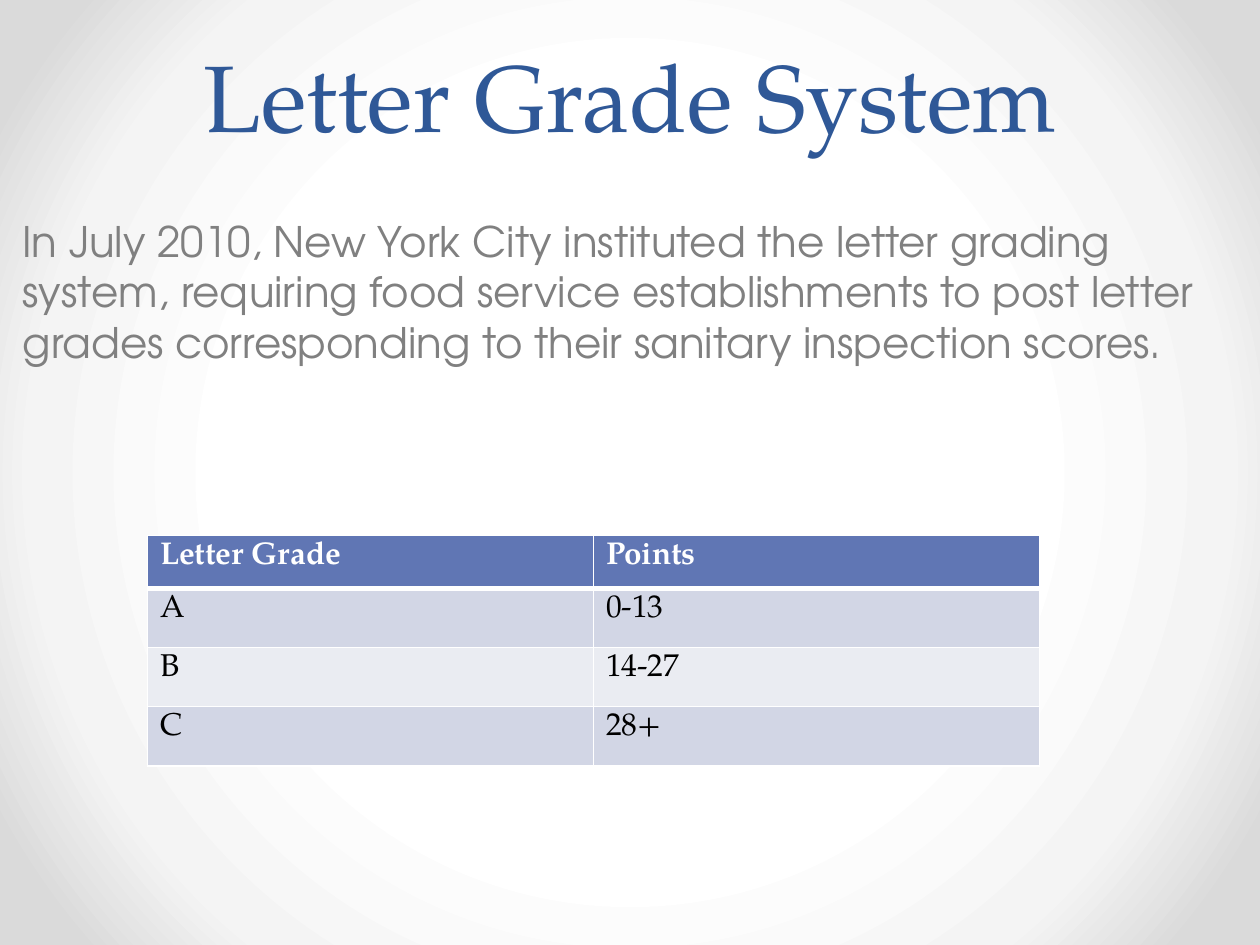
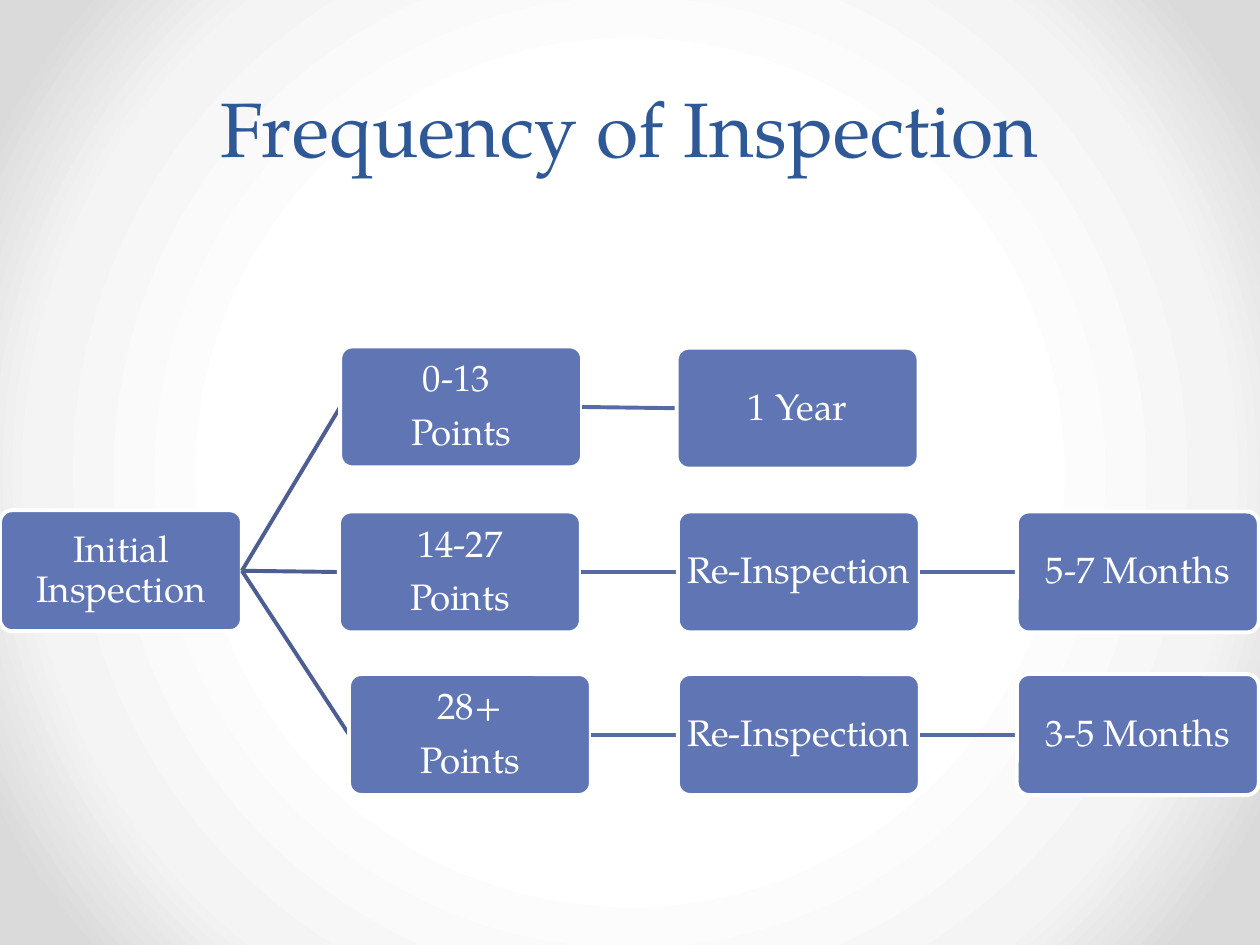
"""Build two slides on restaurant letter grades and inspection frequency."""
from dataclasses import dataclass
from typing import Optional

from pptx import Presentation
from pptx.dml.color import RGBColor
from pptx.enum.shapes import MSO_CONNECTOR, MSO_SHAPE
from pptx.enum.text import MSO_ANCHOR, PP_ALIGN
from pptx.oxml import parse_xml
from pptx.oxml.ns import nsdecls
from pptx.oxml.xmlchemy import OxmlElement
from pptx.util import Emu, Pt

EMU_PER_PX = 9144
SERIF, SANS = "TeX Gyre Pagella", "TeX Gyre Adventor"
TITLE_BLUE, BLUE, GRAY = "2F5897", "6076B4", "808080"
WHITE, BLACK = "FFFFFF", "000000"
BANDS = ("D2D6E5", "EAECF2")
BRANCH_LINE, CHAIN_LINE = "4D5E90", "576BA3"
BACKDROP_STOPS = ((50, WHITE), (76, "F4F4F4"), (92, "DADADA"))
BOX_WIDTH, BOX_HEIGHT = 192, 96
GRADES = (("Letter Grade", "Points"), ("A", "0-13"), ("B", "14-27"), ("C", "28+"))


@dataclass(frozen=True)
class Step:
    """One box of the inspection flow and the step that leads to it."""
    name: str
    lines: tuple[str, ...]
    left: int
    top: int
    parent: Optional[str] = None


STEPS = (
    Step("initial", ("Initial Inspection",), 0, 405),
    Step("low", ("0-13 ", "Points"), 270, 275, "initial"),
    Step("low wait", ("1 Year",), 537, 276, "low"),
    Step("middle", ("14-27", "Points"), 269, 406, "initial"),
    Step("middle recheck", ("Re-Inspection",), 538, 406, "middle"),
    Step("middle wait", ("5-7 Months",), 807, 406, "middle recheck"),
    Step("high", ("28+", "Points"), 277, 535, "initial"),
    Step("high recheck", ("Re-Inspection",), 538, 535, "high"),
    Step("high wait", ("3-5 Months",), 807, 535, "high recheck"),
)


def px(length: int) -> Emu:
    """Turn a length in px into EMU."""
    return Emu(length * EMU_PER_PX)


def color(code: str) -> RGBColor:
    """Turn a hex string into a colour."""
    return RGBColor.from_string(code)


def style(para, size: int, code: str, name: str = SERIF, bold: bool = False) -> None:
    """Set the font of a paragraph."""
    font = para.font
    font.name, font.size, font.bold = name, Pt(size), bold
    font.color.rgb = color(code)


def set_backdrop(deck) -> None:
    """Give the master a round white-to-gray gradient."""
    master = deck.slide_master
    master.background.fill.solid()
    properties = master.element.xpath(".//p:bgPr")[0]
    stops = "".join(
        f'<a:gs pos="{stop * 1000}"><a:srgbClr val="{code}"/></a:gs>'
        for stop, code in BACKDROP_STOPS
    )
    gradient = parse_xml(
        f'<a:gradFill {nsdecls("a")} rotWithShape="1"><a:gsLst>{stops}</a:gsLst>'
        '<a:path path="circle"><a:fillToRect l="50000" t="50000" r="50000" b="50000"/>'
        "</a:path></a:gradFill>"
    )
    properties.replace(properties[0], gradient)


def add_text(page, text: str, left: int, top: int, width: int, height: int):
    """Add a wrapping text box and return its frame."""
    frame = page.shapes.add_textbox(px(left), px(top), px(width), px(height)).text_frame
    frame.word_wrap = True
    frame.text = text
    return frame


def add_title(page, text: str, left: int, top: int, width: int, height: int, size: int) -> None:
    """Add a centred slide title that sits on the bottom of its area."""
    frame = add_text(page, text, left, top, width, height)
    frame.vertical_anchor = MSO_ANCHOR.BOTTOM
    para = frame.paragraphs[0]
    para.alignment, para.line_spacing = PP_ALIGN.CENTER, Pt(58)
    style(para, size, TITLE_BLUE)


def add_borders(cell, top: int, bottom: int) -> None:
    """Draw white cell borders, with top and bottom widths in points."""
    properties = cell._tc.get_or_add_tcPr()
    for side, width in (("L", 1), ("R", 1), ("T", top), ("B", bottom)):
        properties.append(parse_xml(
            f'<a:ln{side} {nsdecls("a")} w="{Pt(width)}"><a:solidFill>'
            f'<a:srgbClr val="{WHITE}"/></a:solidFill></a:ln{side}>'
        ))


def add_grades(page) -> None:
    """Add the table of letter grades and points."""
    heights = (42, 47, 47, 47)
    table = page.shapes.add_table(
        len(GRADES), 2, px(117), px(425), px(708), px(sum(heights))
    ).table
    table.horz_banding = False
    for row, (values, height) in enumerate(zip(GRADES, heights)):
        table.rows[row].height = px(height)
        header = row == 0
        for column, value in enumerate(values):
            cell = table.cell(row, column)
            cell.text = value
            style(cell.text_frame.paragraphs[0], 18, WHITE if header else BLACK, bold=header)
            add_borders(cell, top=3 if row == 1 else 1, bottom=3 if header else 1)
            cell.fill.solid()
            cell.fill.fore_color.rgb = color(BLUE if header else BANDS[(row - 1) % 2])


def add_step(page, step: Step):
    """Add a rounded box with the text of one step."""
    box = page.shapes.add_shape(
        MSO_SHAPE.ROUNDED_RECTANGLE, px(step.left), px(step.top), px(BOX_WIDTH), px(BOX_HEIGHT)
    )
    box.adjustments[0] = 0.1
    box.shadow.inherit = False
    box.fill.solid()
    box.fill.fore_color.rgb = color(BLUE)
    box.line.color.rgb = color(WHITE)
    box.line.width = Pt(2.25)
    frame = box.text_frame
    frame.word_wrap = True
    frame.vertical_anchor = MSO_ANCHOR.MIDDLE
    frame.margin_left = frame.margin_right = frame.margin_top = frame.margin_bottom = px(4)
    frame.text = "\n".join(step.lines)
    for para in frame.paragraphs:
        para.alignment, para.line_spacing, para.space_after = PP_ALIGN.CENTER, 0.9, Pt(8)
        style(para, 21, WHITE)
    return box


def add_link(page, parent, child, code: str) -> None:
    """Join the right of one box to the left of the next, beneath the latter."""
    link = page.shapes.add_connector(MSO_CONNECTOR.STRAIGHT, 0, 0, 0, 0)
    link.begin_connect(parent, 3)
    link.end_connect(child, 1)
    link.line.color.rgb = color(code)
    link.line.width = Pt(2.25)
    link.element.spPr.append(OxmlElement("a:effectLst"))
    link.element.addnext(child.element)


def build_grade_page(page) -> None:
    """Build the slide on the letter grades."""
    add_title(page, "Letter Grade System", 50, 0, 900, 125, 54)
    intro = add_text(
        page,
        "In July 2010, New York City instituted the letter grading system, requiring food "
        "service establishments to post letter grades corresponding to their sanitary "
        "inspection scores.",
        8, 166, 967, 468,
    )
    style(intro.paragraphs[0], 24, GRAY, SANS)
    add_grades(page)


def build_frequency_page(page) -> None:
    """Build the slide on how often inspections happen."""
    add_title(page, "Frequency of Inspection", 0, 25, 1000, 117, 44)
    boxes = {}
    for step in STEPS:
        boxes[step.name] = add_step(page, step)
        if step.parent:
            code = BRANCH_LINE if step.parent == "initial" else CHAIN_LINE
            add_link(page, boxes[step.parent], boxes[step.name], code)


def main() -> None:
    """Build and save the deck."""
    deck = Presentation()
    deck.slide_width, deck.slide_height = px(1000), px(750)
    set_backdrop(deck)
    for build in (build_grade_page, build_frequency_page):
        build(deck.slides.add_slide(deck.slide_layouts[6]))
    deck.save("out.pptx")


if __name__ == "__main__":
    main()
